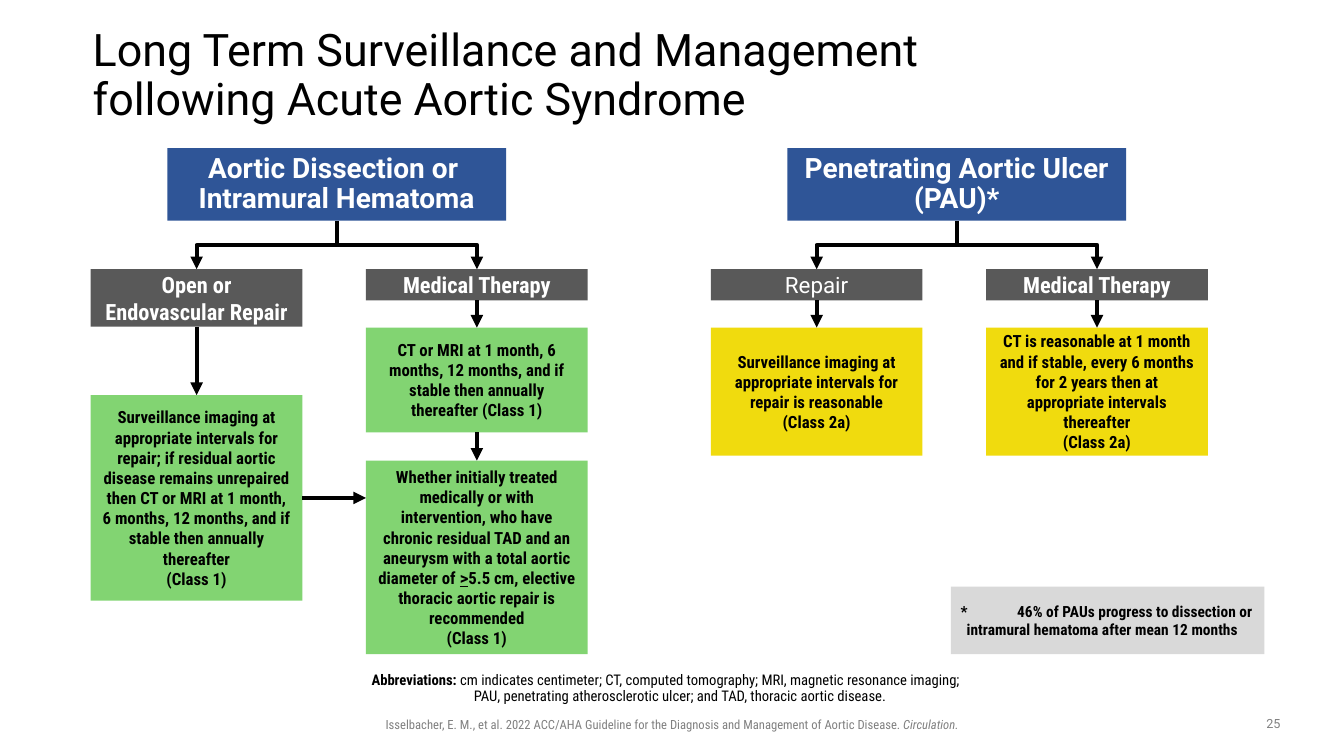
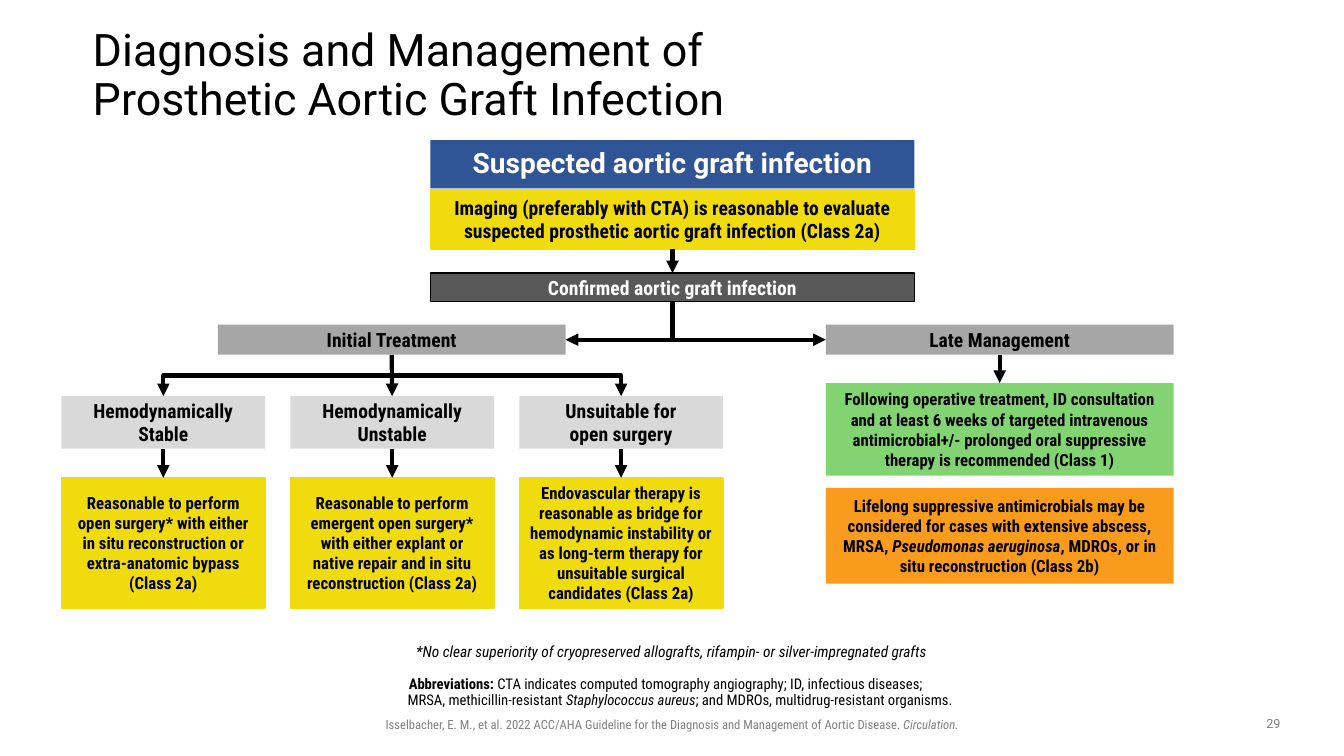
from dataclasses import dataclass, replace

from lxml import etree
from pptx import Presentation
from pptx.dml.color import RGBColor
from pptx.enum.shapes import MSO_CONNECTOR, MSO_SHAPE
from pptx.enum.text import MSO_ANCHOR, PP_ALIGN
from pptx.oxml.ns import qn
from pptx.util import Inches, Pt

RECTANGLE = MSO_SHAPE.RECTANGLE
STRAIGHT, ELBOW = MSO_CONNECTOR.STRAIGHT, MSO_CONNECTOR.ELBOW
LEFT, CENTER = PP_ALIGN.LEFT, PP_ALIGN.CENTER
TOP, MIDDLE = MSO_ANCHOR.TOP, MSO_ANCHOR.MIDDLE
SIDE_TOP, SIDE_LEFT, SIDE_BOTTOM, SIDE_RIGHT = range(4)

BLACK, WHITE, MUTED = "000000", "FFFFFF", "808080"
BLUE, CHARCOAL, GRAY, SILVER = "2F5597", "595959", "A6A6A6", "D9D9D9"
GREEN, YELLOW, ORANGE = "82D472", "F0DB0E", "F99B1D"
NO_INSETS = (0, 0, 0, 0)
BOX_INSETS = (0.1, 0.05, 0.1, 0.05)
CAPTION_INSETS = (0, 0.05, 0.1, 0.05)


def color(value):
    return RGBColor.from_string(value)


@dataclass(frozen=True)
class TextStyle:
    size: float
    color: str = BLACK
    font: str = "Roboto Condensed"
    bold: bool = False
    italic: bool = False
    underline: bool = False
    align: int = CENTER
    spacing: float = 1.0
    hanging: float = 0


TITLE = TextStyle(32, font="Roboto", align=LEFT, spacing=0.9)
TOPIC = TextStyle(20, WHITE, "Roboto", bold=True, spacing=0.9)
THERAPY = TextStyle(16, WHITE, bold=True)
REPAIR = TextStyle(16, WHITE, "Roboto")
STAGE = TextStyle(14, bold=True)
ADVICE = TextStyle(12, bold=True)
ASIDE = TextStyle(11, bold=True, align=LEFT, hanging=0.06)
FOOTNOTE = TextStyle(11, italic=True)
CAPTION = TextStyle(10.5, spacing=0.9, hanging=0.25)
CITATION = TextStyle(9, MUTED)
NUMBER = TextStyle(9, MUTED, "Roboto")


class FlowDeck:
    """Draws flowchart slides in one shared style."""

    def __init__(self):
        self.presentation = Presentation()
        self.presentation.slide_width = Inches(13.33)
        self.presentation.slide_height = Inches(7.5)
        self.slide = None

    def start(self, title, title_width, number):
        layout = self.presentation.slide_layouts[6]
        self.slide = self.presentation.slides.add_slide(layout)
        self.text(1.81, 7.06, 9.71, 0.25, [[
            "Isselbacher, E. M., et al. 2022 ACC/AHA Guideline for the Diagnosis "
            "and Management of Aortic Disease. ",
            ("Circulation.", {"italic": True})]], CITATION)
        self.text(12.42, 7.05, 0.42, 0.26, [[str(number)]], NUMBER)
        self.text(0.92, 0.4, title_width, 0.72, [[title]], TITLE, NO_INSETS, MIDDLE)

    def fill_text(self, shape, paragraphs, style, insets, anchor):
        frame = shape.text_frame
        frame.word_wrap = True
        frame.vertical_anchor = anchor
        (frame.margin_left, frame.margin_top,
         frame.margin_right, frame.margin_bottom) = map(Inches, insets)
        for index, runs in enumerate(paragraphs):
            paragraph = frame.add_paragraph() if index else frame.paragraphs[0]
            paragraph.alignment = style.align
            paragraph.line_spacing = style.spacing
            if style.hanging:
                properties = paragraph._p.get_or_add_pPr()
                properties.set("marL", str(Inches(style.hanging)))
                properties.set("indent", str(-Inches(style.hanging)))
            for part in runs:
                text, changes = (part, {}) if isinstance(part, str) else part
                self.add_text(paragraph, text, replace(style, **changes))

    def add_text(self, paragraph, text, style):
        for index, line in enumerate(text.split("\n")):
            if index:
                paragraph.add_line_break()
            run = paragraph.add_run()
            run.text = line
            font = run.font
            font.name, font.size = style.font, Pt(style.size)
            font.bold, font.italic = style.bold, style.italic
            font.underline = style.underline
            font.color.rgb = color(style.color)

    def text(self, left, top, width, height, paragraphs, style,
             insets=BOX_INSETS, anchor=TOP):
        shape = self.slide.shapes.add_textbox(*map(Inches, (left, top, width, height)))
        self.fill_text(shape, paragraphs, style, insets, anchor)

    def box(self, left, top, width, height, fill, paragraphs, style,
            insets=BOX_INSETS, outline=None):
        shape = self.slide.shapes.add_shape(
            RECTANGLE, *map(Inches, (left, top, width, height)))
        shape.shadow.inherit = False
        shape.fill.solid()
        shape.fill.fore_color.rgb = color(fill)
        if outline:
            shape.line.color.rgb = color(outline)
            shape.line.width = Pt(1)
        else:
            shape.line.fill.background()
        self.fill_text(shape, paragraphs, style, insets, MIDDLE)
        return shape

    def topic(self, left, top, width, height, text):
        return self.box(left, top, width, height, BLUE, [[text]], TOPIC, NO_INSETS)

    def connector(self, kind, start_x, start_y, end_x, end_y):
        connector = self.slide.shapes.add_connector(kind, start_x, start_y, end_x, end_y)
        connector.line.color.rgb = color(BLACK)
        connector.line.width = Pt(3)
        properties = connector._element.spPr
        etree.SubElement(properties.find(qn("a:ln")), qn("a:tailEnd"), type="triangle")
        etree.SubElement(properties, qn("a:effectLst"))
        return connector

    def down(self, source, target):
        connector = self.connector(STRAIGHT, 0, 0, 0, 0)
        connector.begin_connect(source, SIDE_BOTTOM)
        connector.end_connect(target, SIDE_TOP)

    def across(self, source, target):
        middle = source.top + source.height // 2
        connector = self.connector(
            STRAIGHT, source.left + source.width, middle, target.left, middle)
        connector.begin_connect(source, SIDE_RIGHT)

    def elbow(self, source, target, side=SIDE_TOP):
        connector = self.connector(ELBOW, 0, 0, 0, 0)
        connector.begin_connect(source, SIDE_BOTTOM)
        connector.end_connect(target, side)
        start_x, start_y = connector.begin_x, connector.begin_y
        end_x, end_y = connector.end_x, connector.end_y
        reach, drop = abs(end_x - start_x), end_y - start_y
        connector.left = (start_x + end_x - drop) // 2
        connector.top = (start_y + end_y - reach) // 2
        connector.width, connector.height = drop, reach
        rightward = end_x > start_x
        properties = connector._element.spPr
        transform = properties.find(qn("a:xfrm"))
        transform.set("rot", str((270 if rightward else 90) * 60000))
        transform.set("flipH", "1" if rightward else "0")
        transform.set("flipV", "0")
        if side != SIDE_TOP:
            properties.find(qn("a:prstGeom")).set("prst", "bentConnector2")


def surveillance(deck):
    deck.start("Long Term Surveillance and Management following Acute Aortic Syndrome",
               9.83, 25)
    branches = [
        (0, "Aortic Dissection or \nIntramural Hematoma",
         "Open or Endovascular Repair", 0.57, THERAPY, 3.92, 2.04, GREEN,
         [["Surveillance imaging at appropriate intervals for repair; if residual "
           "aortic disease remains unrepaired then CT or MRI at 1 month, 6 months, "
           "12 months, and if stable then annually thereafter"], ["(Class 1)"]],
         1.04,
         [["CT or MRI at 1 month, 6 months, 12 months, and if stable then annually "
           "thereafter (Class 1)"]]),
        (6.15, "Penetrating Aortic Ulcer (PAU)*",
         "Repair", 0.31, REPAIR, 3.25, 1.27, YELLOW,
         [["Surveillance imaging at appropriate intervals for repair is reasonable"],
          ["(Class 2a)"]],
         1.27,
         [["CT is reasonable at 1 month and if stable, every 6 months for 2 years "
           "then at appropriate intervals thereafter"], ["(Class 2a)"]]),
    ]
    advice_pairs = []
    for (shift, condition, repair_text, repair_height, repair_style, repair_top,
         repair_advice_height, fill, repair_advice, medical_height,
         medical_advice) in branches:
        topic = deck.topic(1.66 + shift, 1.47, 3.36, 0.72, condition)
        repair = deck.box(0.9 + shift, 2.67, 2.1, repair_height, CHARCOAL,
                          [[repair_text]], repair_style)
        medical = deck.box(3.63 + shift, 2.67, 2.2, 0.31, CHARCOAL,
                           [["Medical Therapy"]], THERAPY)
        after_repair = deck.box(0.9 + shift, repair_top, 2.1, repair_advice_height,
                                fill, repair_advice, ADVICE)
        after_medical = deck.box(3.63 + shift, 3.25, 2.2, medical_height,
                                 fill, medical_advice, ADVICE)
        for therapy, advice in ((repair, after_repair), (medical, after_medical)):
            deck.elbow(topic, therapy)
            deck.down(therapy, advice)
        advice_pairs.append((after_repair, after_medical))

    elective = deck.box(3.63, 4.57, 2.2, 1.92, GREEN, [
        ["Whether initially treated medically or with intervention, who have chronic "
         "residual TAD and an aneurysm with a total aortic diameter of ",
         (">", {"font": "Roboto", "underline": True}),
         "5.5 cm, elective thoracic aortic repair is recommended"],
        ["(Class 1)"]], ADVICE)
    after_repair, after_medical = advice_pairs[0]
    deck.down(after_medical, elective)
    deck.across(after_repair, elective)

    deck.box(9.43, 5.82, 3.11, 0.67, SILVER, [[
        "*\t46% of PAUs progress to dissection or intramural hematoma after mean "
        "12 months"]], ASIDE)
    deck.text(2.09, 6.63, 9.16, 0.35, [[
        ("Abbreviations: ", {"bold": True}),
        "cm indicates centimeter; CT, computed tomography; MRI, magnetic resonance "
        "imaging; \nPAU, penetrating atherosclerotic ulcer; and TAD, thoracic aortic "
        "disease."]], CAPTION, CAPTION_INSETS)


def graft_infection(deck):
    deck.start("Diagnosis and Management of \nProsthetic Aortic Graft Infection", 11.5, 29)
    deck.topic(4.27, 1.39, 4.8, 0.48, "Suspected aortic graft infection")
    imaging = deck.box(4.27, 1.88, 4.8, 0.59, YELLOW, [[
        "Imaging (preferably with CTA) is reasonable to evaluate suspected prosthetic "
        "aortic graft infection (Class 2a)"]], STAGE, outline=YELLOW)
    confirmed = deck.box(4.27, 2.71, 4.8, 0.28, CHARCOAL,
                         [["Confirmed aortic graft infection"]],
                         replace(STAGE, color=WHITE), outline=BLACK)
    initial, late = [
        deck.box(left, 3.22, 3.45, 0.3, GRAY, [[label]], STAGE)
        for left, label in ((2.16, "Initial Treatment"), (8.19, "Late Management"))]
    deck.down(imaging, confirmed)
    deck.elbow(confirmed, initial, SIDE_RIGHT)
    deck.elbow(confirmed, late, SIDE_LEFT)

    patients = [
        (("Hemodynamically", "Stable"), deck.elbow,
         "Reasonable to perform open surgery* with either in situ reconstruction or "
         "extra-anatomic bypass (Class 2a)"),
        (("Hemodynamically", "Unstable"), deck.down,
         "Reasonable to perform emergent open surgery* with either explant or native "
         "repair and in situ reconstruction (Class 2a)"),
        (("Unsuitable for", "open surgery"), deck.elbow,
         "Endovascular therapy is reasonable as bridge for hemodynamic instability or "
         "as long-term therapy for unsuitable surgical candidates (Class 2a)"),
    ]
    for column, (label, link, treatment) in enumerate(patients):
        left = 0.61 + column * (2.02 + 0.25)
        patient = deck.box(left, 3.93, 2.02, 0.52, SILVER,
                           [[line] for line in label], STAGE)
        advice = deck.box(left, 4.74, 2.02, 1.29, YELLOW, [[treatment]], ADVICE,
                          outline=YELLOW)
        link(initial, patient)
        deck.down(patient, advice)

    antimicrobial = deck.box(8.19, 3.8, 3.45, 0.92, GREEN, [[
        "Following operative treatment, ID consultation and at least 6 weeks of "
        "targeted intravenous antimicrobial+/- prolonged oral suppressive therapy is "
        "recommended (Class 1)"]], ADVICE)
    deck.down(late, antimicrobial)
    deck.box(8.19, 4.84, 3.45, 0.95, ORANGE, [[
        "Lifelong suppressive antimicrobials may be considered for cases with "
        "extensive abscess, MRSA, ",
        ("Pseudomonas aeruginosa", {"italic": True}),
        ", MDROs, or in situ reconstruction (Class 2b)"]], ADVICE)

    deck.text(3.33, 6.32, 6.67, 0.29, [[
        "*No clear superiority of cryopreserved allografts, rifampin- or "
        "silver-impregnated grafts"]], FOOTNOTE)
    deck.text(0.92, 6.67, 11.5, 0.3, [[
        ("Abbreviations: ", {"bold": True}),
        "CTA indicates computed tomography angiography; ID, infectious diseases; \n"
        "MRSA, methicillin-resistant ",
        ("Staphylococcus aureus", {"italic": True}),
        "; and MDROs, multidrug-resistant organisms."]], CAPTION, CAPTION_INSETS)


def main():
    deck = FlowDeck()
    surveillance(deck)
    graft_infection(deck)
    deck.presentation.save("out.pptx")


if __name__ == "__main__":
    main()
